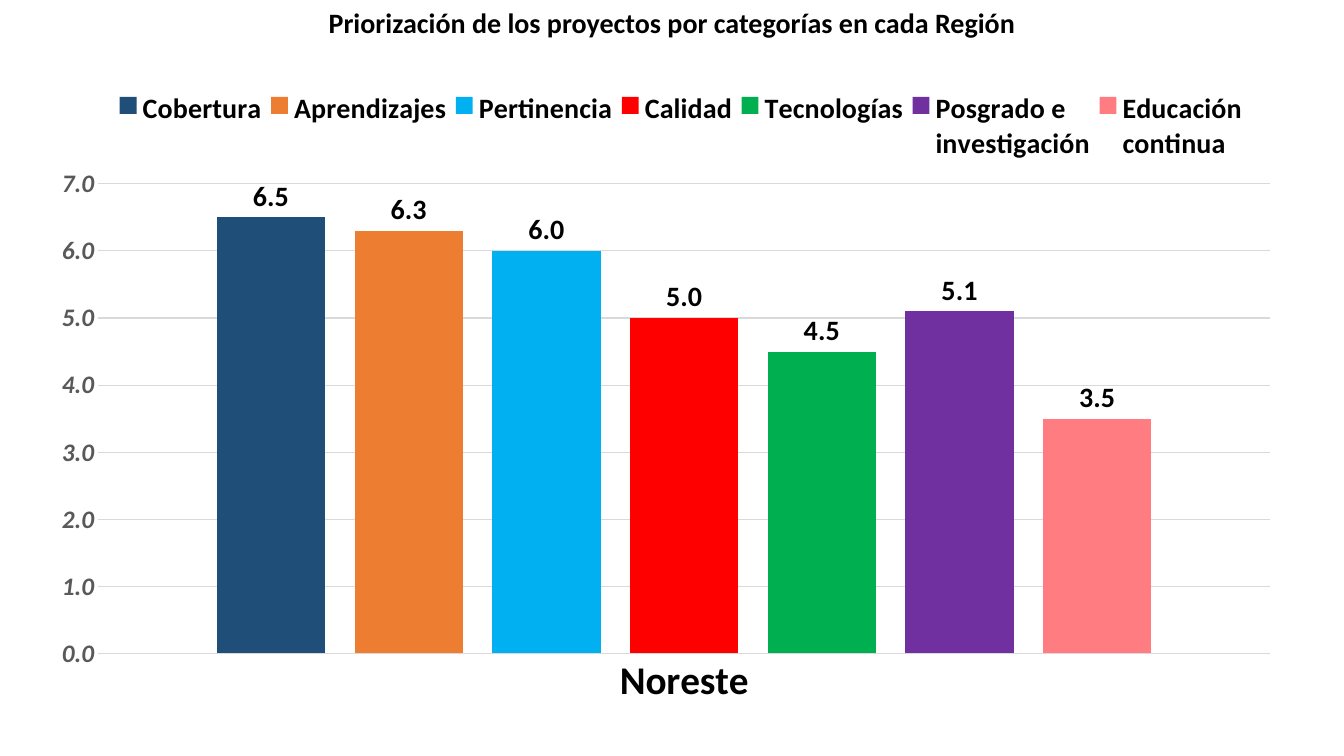
from lxml.etree import SubElement
from pptx import Presentation
from pptx.chart.data import CategoryChartData
from pptx.dml.color import RGBColor
from pptx.enum.chart import (XL_CHART_TYPE, XL_LABEL_POSITION,
                             XL_LEGEND_POSITION, XL_TICK_MARK)
from pptx.enum.text import PP_ALIGN
from pptx.oxml.ns import qn
from pptx.util import Inches, Pt

BLACK = RGBColor(0x00, 0x00, 0x00)
GRAY = RGBColor(0x59, 0x59, 0x59)
GRID = RGBColor(0xD9, 0xD9, 0xD9)
NAVY = RGBColor(0x1F, 0x4E, 0x79)
ORANGE = RGBColor(0xED, 0x7D, 0x31)
SKY = RGBColor(0x00, 0xB0, 0xF0)
RED = RGBColor(0xFF, 0x00, 0x00)
GREEN = RGBColor(0x00, 0xB0, 0x50)
PURPLE = RGBColor(0x70, 0x30, 0xA0)
PINK = RGBColor(0xFF, 0x7C, 0x80)

FONT = "Calibri"
TITLE = "Priorización de los proyectos por categorías en cada Región"
REGION = "Noreste"
PROJECTS = [
    ("Cobertura", 6.5, NAVY),
    ("Aprendizajes", 6.3, ORANGE),
    ("Pertinencia", 6.0, SKY),
    ("Calidad", 5.0, RED),
    ("Tecnologías", 4.5, GREEN),
    ("Posgrado e \ninvestigación", 5.1, PURPLE),
    ("Educación \ncontinua", 3.5, PINK),
]
# Left, top, width, height as shares of the chart
PLOT_AREA = (0.03, 0.18, 0.96, 0.69)
LEGEND_AREA = (0.04, 0.04, 0.94, 0.11)


def set_font(font, size, color=BLACK, italic=False):
    font.name, font.size = FONT, Pt(size)
    font.bold, font.italic = True, italic
    font.color.rgb = color


def set_layout(element, index, area, inner=False):
    """Place a chart part by hand; index is where its layout element belongs."""
    for old in element.findall(qn("c:layout")):
        element.remove(old)
    layout = SubElement(element, qn("c:layout"))
    element.insert(index, layout)
    manual = SubElement(layout, qn("c:manualLayout"))
    settings = [("layoutTarget", "inner")] if inner else []
    settings += [("xMode", "edge"), ("yMode", "edge")]
    settings += zip("xywh", area)
    for tag, value in settings:
        SubElement(manual, qn(f"c:{tag}")).set("val", str(value))


def add_title(slide, width):
    tf = slide.shapes.add_textbox(0, Inches(0.01), width, Inches(0.44)).text_frame
    tf.word_wrap = True
    p = tf.paragraphs[0]
    p.text = TITLE
    p.alignment = PP_ALIGN.CENTER
    set_font(p.runs[0].font, 20)


def add_projects_chart(slide):
    data = CategoryChartData(number_format="0.0")
    data.categories = [REGION]
    for name, value, _ in PROJECTS:
        data.add_series(name, [value])
    chart = slide.shapes.add_chart(
        XL_CHART_TYPE.COLUMN_CLUSTERED, Inches(0.61), Inches(0.61),
        Inches(12.11), Inches(6.75), data).chart
    chart.has_title = False
    chart.font.name, chart.font.size = FONT, Pt(10)

    plot = chart.plots[0]
    plot.vary_by_categories = False
    plot.gap_width, plot.overlap = 219, -27
    for series, (_, _, color) in zip(plot.series, PROJECTS):
        series.format.fill.solid()
        series.format.fill.fore_color.rgb = color
        labels = series.data_labels
        labels.show_value = True
        labels.position = XL_LABEL_POSITION.OUTSIDE_END
        labels.number_format = "0.0"
        labels.number_format_is_linked = False
        set_font(labels.font, 20)

    regions, scores = chart.category_axis, chart.value_axis
    for axis in (regions, scores):
        axis.major_tick_mark = axis.minor_tick_mark = XL_TICK_MARK.NONE
    set_font(regions.tick_labels.font, 28)
    set_font(scores.tick_labels.font, 18, GRAY, italic=True)
    scores.minimum_scale, scores.maximum_scale, scores.major_unit = 0, 7, 1
    scores.tick_labels.number_format = "0.0"
    scores.tick_labels.number_format_is_linked = False
    scores.format.line.fill.background()
    for line in (regions.format.line, scores.major_gridlines.format.line):
        line.color.rgb = GRID
        line.width = Pt(0.75)

    chart.has_legend = True
    legend = chart.legend
    legend.position = XL_LEGEND_POSITION.BOTTOM
    legend.include_in_layout = False
    set_font(legend.font, 20)
    legend_xml = chart.element.find(".//" + qn("c:legend"))
    set_layout(legend_xml, 1, LEGEND_AREA)
    set_layout(chart.element.find(".//" + qn("c:plotArea")), 0, PLOT_AREA, inner=True)


def main():
    prs = Presentation()
    prs.slide_width, prs.slide_height = Inches(13.33), Inches(7.5)
    slide = prs.slides.add_slide(prs.slide_layouts[6])
    add_projects_chart(slide)
    add_title(slide, prs.slide_width)
    prs.save("out.pptx")


if __name__ == "__main__":
    main()
